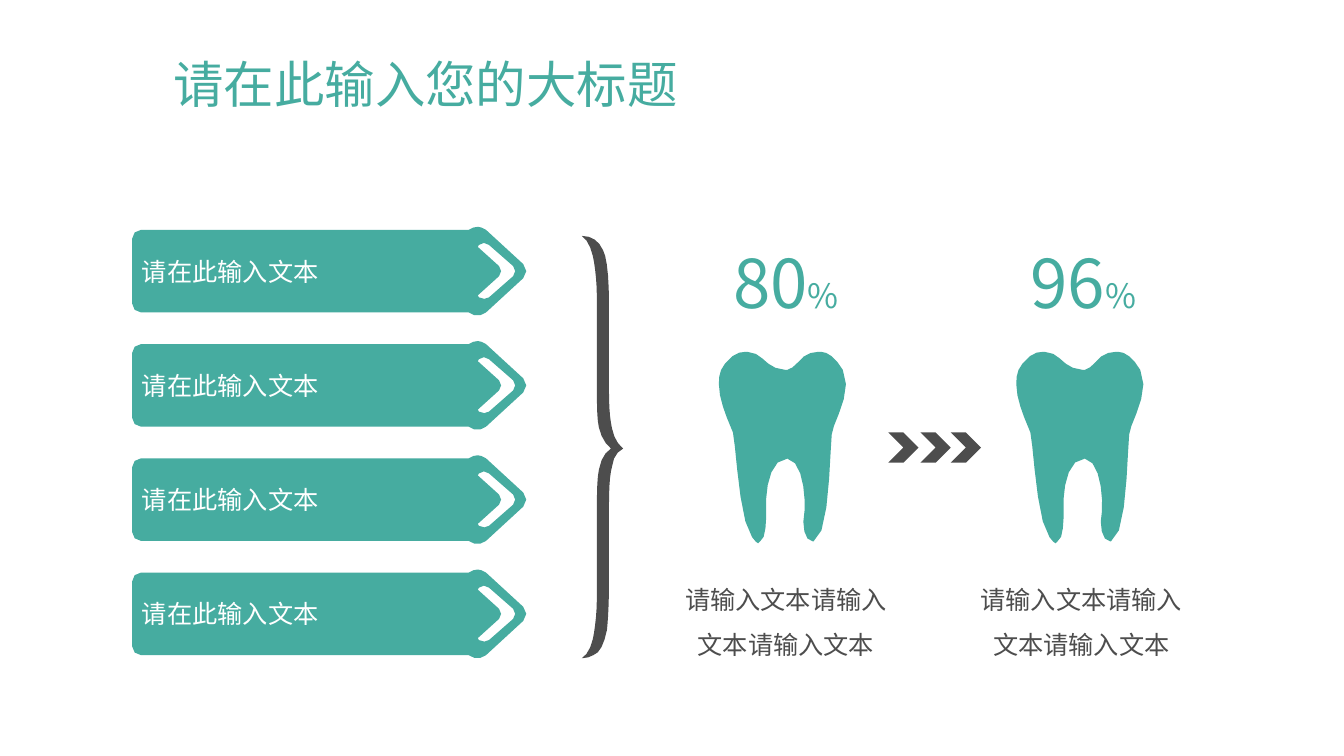
"""Builds a slide with four banners leading to two tooth percentages."""
import math
from dataclasses import dataclass

from lxml import etree
from pptx import Presentation
from pptx import util as u
from pptx.dml.color import RGBColor
from pptx.enum import text
from pptx.oxml import ns


@dataclass(frozen=True)
class Theme:
    font: str = "Noto Sans CJK SC"
    teal: str = "46ACA0"
    dark: str = "4D4D4D"
    white: str = "FFFFFF"
    title: int = 36
    number: int = 48
    percent: int = 24
    body: int = 18


BANNER = """M 3.49 .16 L 3.44 .18 L 3.43 .2 L 3.64 .39
C 3.66 .41 3.66 .42 3.66 .44 C 3.67 .46 3.66 .47 3.64 .49 L 3.43 .68 L 3.44 .7
C 3.47 .72 3.52 .72 3.54 .7 L 3.78 .49 C 3.79 .47 3.8 .46 3.8 .44
C 3.8 .42 3.79 .41 3.78 .39 L 3.54 .18 C 3.53 .17 3.51 .16 3.49 .16
M 3.43 0 C 3.45 0 3.48 .01 3.51 .03 L 3.88 .37 C 3.9 .39 3.91 .41 3.91 .44
C 3.91 .47 3.9 .49 3.88 .51 L 3.51 .85 C 3.46 .89 3.39 .89 3.34 .85 L .09 .85
C .04 .85 0 .81 0 .76 L 0 .12 C 0 .07 .04 .03 .09 .03 L 3.34 .03
C 3.37 .01 3.4 0 3.43 0"""

BRACE = """M .15 .62 C .15 .44 .13 .29 .11 .2 C .09 .11 .05 .03 0 0
C .1 0 .17 .05 .21 .14 C .25 .21 .27 .41 .27 .68 L .27 1.54
C .27 1.7 .28 1.82 .3 1.91 C .32 2 .35 2.06 .41 2.11
C .35 2.14 .31 2.2 .3 2.29 C .28 2.36 .27 2.49 .27 2.67 L .27 3.46
C .27 3.66 .26 3.81 .25 3.91 C .23 4.01 .2 4.09 .16 4.13
C .12 4.16 .07 4.19 0 4.19 C .05 4.16 .09 4.09 .11 4 C .13 3.9 .15 3.76 .15 3.58
L .15 2.78 C .15 2.57 .15 2.42 .17 2.32 C .19 2.21 .23 2.15 .29 2.11
C .23 2.06 .19 1.99 .17 1.9 C .15 1.81 .15 1.66 .15 1.47 L .15 .62"""

TOOTH = """M .93 1.88 L .94 1.88 C 1.1 1.84 1.1 1 1.12 .82
C 1.12 .72 1.34 .4 1.23 .18 C 1.16 .06 1.08 0 1.01 0 L .99 0
C .91 0 .83 .04 .79 .1 C .75 .16 .71 .16 .68 .18 L .66 .18
C .55 .18 .47 .1 .47 .1 C .44 .08 .38 0 .28 0 L .27 0
C .2 0 .14 .02 .06 .12 C .01 .18 0 .24 0 .32 C 0 .5 .11 .72 .14 .8
C .17 .92 .2 1.68 .33 1.84 C .36 1.88 .38 1.9 .39 1.9 C .41 1.9 .41 1.9 .41 1.88
C .47 1.86 .47 1.66 .47 1.56 C .46 1.42 .49 1.06 .68 1.06
C .83 1.08 .86 1.42 .85 1.58 C .82 1.72 .85 1.88 .93 1.88"""

CHEVRONS = " ".join(
    f"M {x:.2f} 0 L {x + .15:.2f} 0 L {x + .3:.2f} .15 L {x + .15:.2f} .3 "
    f"L {x:.2f} .3 L {x + .15:.2f} .15"
    for x in (0, .32, .62))


def curve_points(control):
    """Sample a cubic curve, with more points on a longer one."""
    steps = min(5, math.ceil(12 * math.dist(control[0], control[3])))
    for step in range(1, steps + 1):
        t = step / steps
        weights = ((1 - t) ** 3, 3 * t * (1 - t) ** 2, 3 * t * t * (1 - t), t ** 3)
        yield tuple(sum(weight * point[axis] for weight, point in zip(weights, control))
                    for axis in (0, 1))


def outline_contours(outline):
    """Turn move, line and curve commands into lists of points in EMU."""
    contours = []
    tokens = iter(outline.split())
    for command in tokens:
        count = 3 if command == "C" else 1
        points = [(float(next(tokens)), float(next(tokens))) for _ in range(count)]
        if command == "M":
            contours.append([])
        elif command == "C":
            points = curve_points([contours[-1][-1]] + points)
        contours[-1].extend(points)
    return [[(u.Inches(x), u.Inches(y)) for x, y in contour] for contour in contours]


class SlideBuilder:
    """Holds the theme and the current slide and adds elements to it."""

    def __init__(self, slide, theme):
        self.slide = slide
        self.theme = theme

    def style_font(self, font, properties, size, color):
        """Set size, colour and both font faces."""
        font.size = u.Pt(size)
        font.color.rgb = RGBColor.from_string(color)
        font.name = self.theme.font
        latin = properties().find(ns.qn("a:latin"))
        east_asian = etree.Element(ns.qn("a:ea"), typeface=self.theme.font)
        latin.addnext(east_asian)

    def style_paragraph(self, paragraph, size, color, alignment, spacing=None):
        """Format a whole paragraph."""
        paragraph.alignment = alignment
        paragraph.line_spacing = spacing
        self.style_font(paragraph.font,
                        lambda: paragraph._p.pPr.find(ns.qn("a:defRPr")), size, color)

    def title(self, wording):
        """Fill and place the title placeholder."""
        shape = self.slide.shapes.title
        shape.left, shape.top = u.Inches(1.62), u.Inches(0.4)
        shape.width, shape.height = u.Inches(10.88), u.Inches(0.93)
        shape.text_frame.text = wording
        shape.text_frame.vertical_anchor = text.MSO_ANCHOR.MIDDLE
        self.style_paragraph(shape.text_frame.paragraphs[0], self.theme.title,
                             self.theme.teal, text.PP_ALIGN.LEFT, 0.9)

    def outline(self, outline, left, top, color):
        """Draw a filled freeform from an outline."""
        first, *others = outline_contours(outline)
        builder = self.slide.shapes.build_freeform(*first[0], scale=1.0)
        builder.add_line_segments(first[1:], close=True)
        for contour in others:
            builder.move_to(*contour[0])
            builder.add_line_segments(contour[1:], close=True)
        shape = builder.convert_to_shape(u.Inches(left), u.Inches(top))
        shape.shadow.inherit = False
        shape.fill.solid()
        shape.fill.fore_color.rgb = RGBColor.from_string(color)
        shape.line.fill.background()
        return shape

    def banner(self, wording, left, top):
        """Draw a labelled arrow banner."""
        frame = self.outline(BANNER, left, top, self.theme.teal).text_frame
        frame.text = wording
        frame.word_wrap = True
        frame.margin_right = u.Inches(0.59)
        frame.vertical_anchor = text.MSO_ANCHOR.MIDDLE
        self.style_paragraph(frame.paragraphs[0], self.theme.body, self.theme.white,
                             text.PP_ALIGN.LEFT)

    def text_box(self, left, top, width, height):
        """Add a wrapping text box and return its frame."""
        box = self.slide.shapes.add_textbox(
            *(u.Inches(length) for length in (left, top, width, height)))
        box.text_frame.word_wrap = True
        return box.text_frame

    def percentage(self, number, left):
        """Write a large number with a small percent sign."""
        paragraph = self.text_box(left, 2.34, 1.73, 0.91).paragraphs[0]
        paragraph.alignment = text.PP_ALIGN.CENTER
        for wording, size in ((number, self.theme.number), ("%", self.theme.percent)):
            run = paragraph.add_run()
            run.text = wording
            self.style_font(run.font, run._r.get_or_add_rPr, size, self.theme.teal)

    def caption(self, wording, left):
        """Write a centred caption below a tooth."""
        frame = self.text_box(left, 5.51, 2.23, 1.17)
        frame.text = wording
        frame.vertical_anchor = text.MSO_ANCHOR.MIDDLE
        self.style_paragraph(frame.paragraphs[0], self.theme.body, self.theme.dark,
                             text.PP_ALIGN.CENTER, 1.5)


def main():
    """Build and save the slide."""
    presentation = Presentation()
    presentation.slide_width, presentation.slide_height = u.Inches(13.33), u.Inches(7.5)
    theme = Theme()
    builder = SlideBuilder(
        presentation.slides.add_slide(presentation.slide_layouts[5]), theme)
    builder.title("请在此输入您的大标题")
    for row in range(4):
        builder.banner("请在此输入文本", 1.31, 2.25 + row * 3.4 / 3)
    builder.outline(BRACE, 5.77, 2.34, theme.dark)
    builder.outline(CHEVRONS, 8.81, 4.29, theme.dark)
    for number, tooth_left, caption_left in (("80", 7.13, 6.68), ("96", 10.08, 9.61)):
        builder.outline(TOOTH, tooth_left, 3.49, theme.teal)
        builder.percentage(number, tooth_left - 0.2)
        builder.caption("请输入文本请输入文本请输入文本", caption_left)
    presentation.save("out.pptx")


if __name__ == "__main__":
    main()
